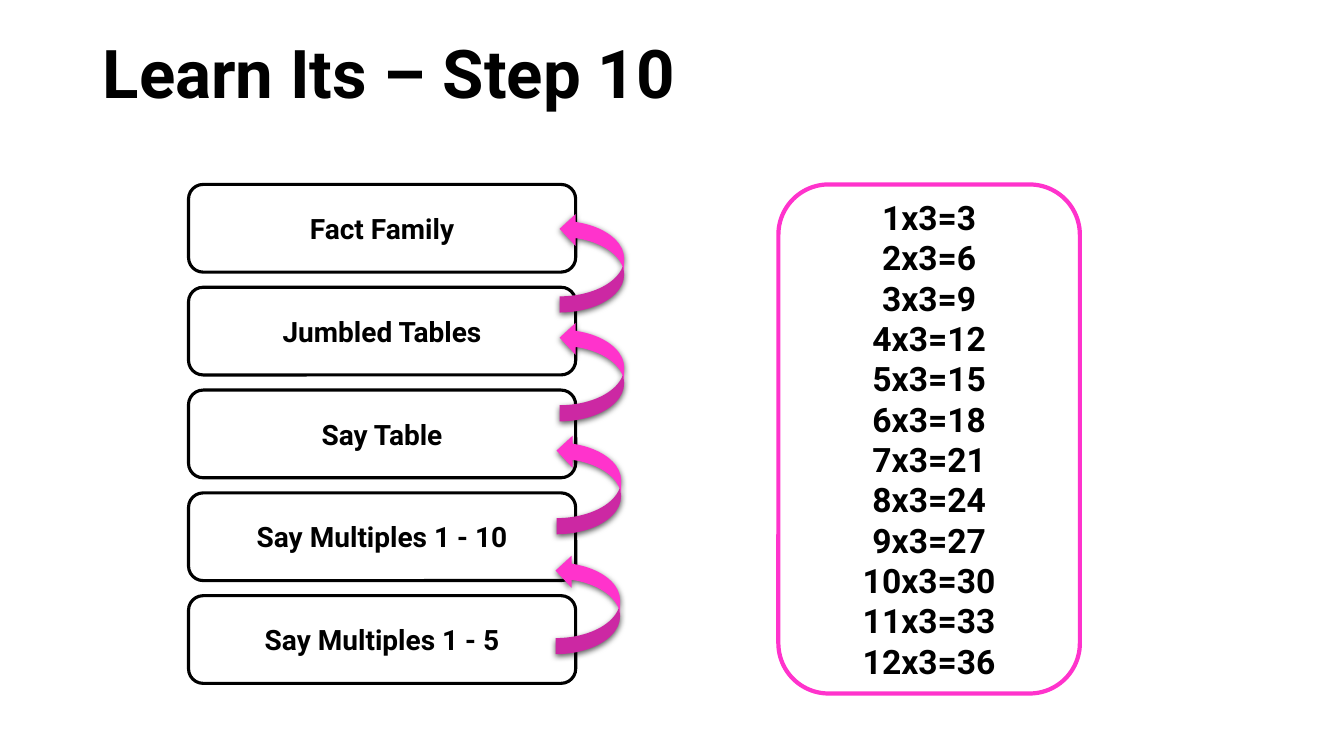
from dataclasses import dataclass

from lxml.etree import SubElement
from pptx import Presentation
from pptx.dml.color import RGBColor
from pptx.enum.shapes import MSO_SHAPE
from pptx.enum.text import MSO_ANCHOR, PP_ALIGN
from pptx.oxml.ns import qn
from pptx.util import Inches, Pt


@dataclass(frozen=True)
class Theme:
    font: str = "Roboto"
    black: RGBColor = RGBColor(0x00, 0x00, 0x00)
    white: RGBColor = RGBColor(0xFF, 0xFF, 0xFF)
    pink: RGBColor = RGBColor(0xFF, 0x33, 0xCC)
    title_size: int = 48
    step_size: int = 20
    fact_size: int = 24


THEME = Theme()
STEPS = [
    "Fact Family",
    "Jumbled Tables",
    "Say Table",
    "Say Multiples 1 - 10",
    "Say Multiples 1 - 5",
]
STEP_TOP, STEP_PITCH = 1.83, 1.02
ARROW_POSITIONS = [(5.51, 5.5), (5.55, 2.11), (5.55, 3.19), (5.52, 4.31)]
TIMES_TABLE = [f"{number}x3={number * 3}" for number in range(1, 13)]


def write_lines(shape, lines, size, alignment):
    frame = shape.text_frame
    frame.word_wrap = True
    frame.vertical_anchor = MSO_ANCHOR.MIDDLE
    frame.text = "\n".join(lines)
    for paragraph in frame.paragraphs:
        paragraph.alignment = alignment
        paragraph.font.name = THEME.font
        paragraph.font.size = Pt(size)
        paragraph.font.bold = True
        paragraph.font.color.rgb = THEME.black


def add_title(slide, text):
    box = slide.shapes.add_textbox(Inches(0.92), Inches(0.04), Inches(11.5), Inches(1.45))
    write_lines(box, [text], THEME.title_size, PP_ALIGN.LEFT)
    box.text_frame.paragraphs[0].line_spacing = 0.9


def add_rounded_box(slide, left, top, width, height, lines, size, color, line_width):
    box = slide.shapes.add_shape(
        MSO_SHAPE.ROUNDED_RECTANGLE, Inches(left), Inches(top), Inches(width), Inches(height)
    )
    box.shadow.inherit = False
    box.fill.solid()
    box.fill.fore_color.rgb = THEME.white
    box.line.color.rgb = color
    box.line.width = Pt(line_width)
    write_lines(box, lines, size, PP_ALIGN.CENTER)


def add_drop_shadow(shape):
    shape.shadow.inherit = False
    effects = shape.element.spPr.find(qn("a:effectLst"))
    shadow = SubElement(
        effects,
        qn("a:outerShdw"),
        blurRad=str(Pt(4.5)),
        dist=str(Pt(1.5)),
        dir="5400000",
        rotWithShape="0",
    )
    color = SubElement(shadow, qn("a:srgbClr"), val=str(THEME.black))
    SubElement(color, qn("a:alpha"), val="63000")


def add_climbing_arrow(slide, left, top):
    arrow = slide.shapes.add_shape(
        MSO_SHAPE.CURVED_RIGHT_ARROW, Inches(left), Inches(top), Inches(0.64), Inches(0.99)
    )
    arrow.rotation = 180
    arrow.fill.solid()
    arrow.fill.fore_color.rgb = THEME.pink
    arrow.line.fill.background()
    add_drop_shadow(arrow)


def main():
    presentation = Presentation()
    presentation.slide_width = Inches(13.33)
    presentation.slide_height = Inches(7.5)
    slide = presentation.slides.add_slide(presentation.slide_layouts[6])

    add_title(slide, "Learn Its – Step 10")
    for index, step in enumerate(STEPS):
        top = STEP_TOP + index * STEP_PITCH
        add_rounded_box(
            slide, 1.87, top, 3.84, 0.87, [step], THEME.step_size, THEME.black, 2.25
        )
    for left, top in ARROW_POSITIONS:
        add_climbing_arrow(slide, left, top)
    add_rounded_box(
        slide, 7.72, STEP_TOP, 2.99, 5.05, TIMES_TABLE, THEME.fact_size, THEME.pink, 3
    )

    presentation.save("out.pptx")


if __name__ == "__main__":
    main()
